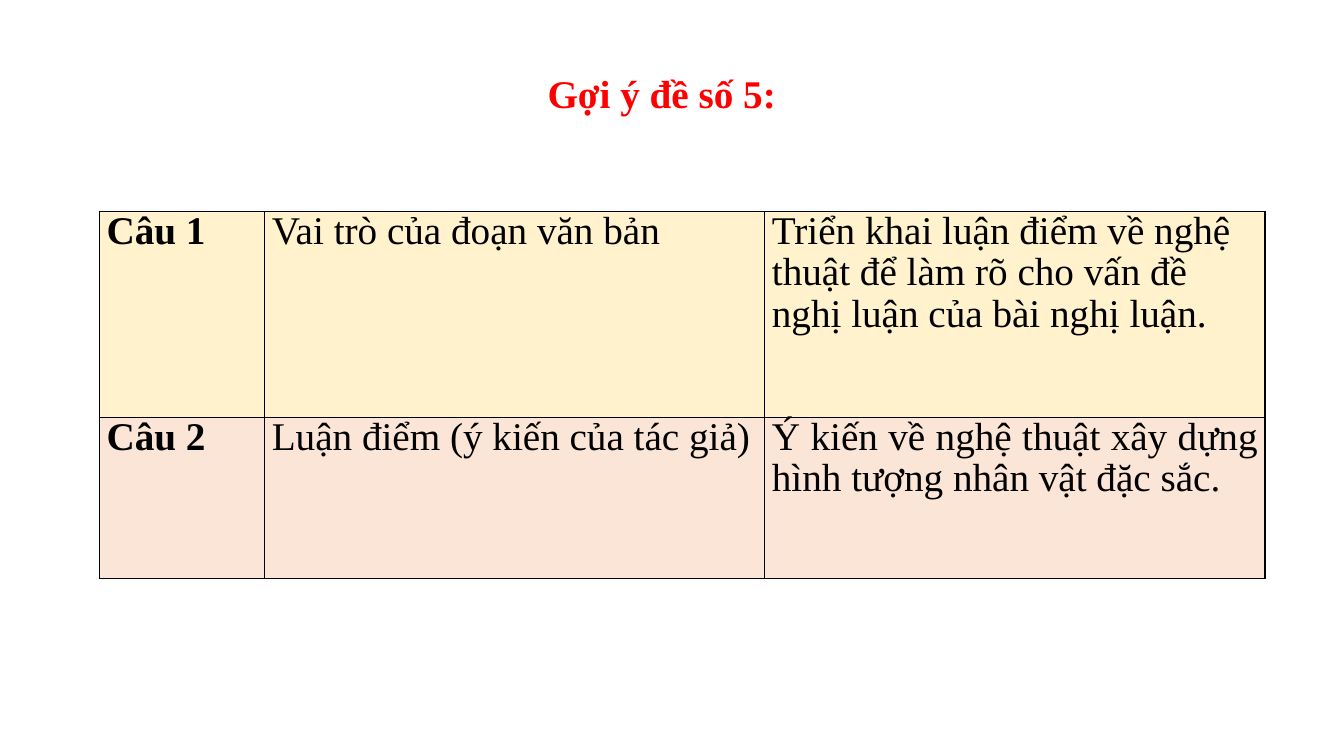
"""Build the answer-hint slide: a red title above a two-row table."""
from dataclasses import dataclass

import lxml.etree
import pptx
import pptx.dml.color
import pptx.enum.text
import pptx.oxml.ns
import pptx.util

SLIDE_WIDTH = pptx.util.Inches(13.33)
SLIDE_HEIGHT = pptx.util.Inches(7.5)
FONT_NAME = "Times New Roman"
FONT_SIZE = pptx.util.Pt(28)
BLACK = "000000"
RED = "FF0000"
LINE_SPACING = 0.95
COLUMN_WIDTHS = [pptx.util.Inches(width) for width in (1.64, 4.96, 4.96)]
LEFT = pptx.enum.text.PP_ALIGN.LEFT
JUSTIFY = pptx.enum.text.PP_ALIGN.JUSTIFY


@dataclass(frozen=True)
class Question:
    label: str
    topic: str
    answer: str
    fill: str
    height: float
    answer_alignment: pptx.enum.text.PP_ALIGN = LEFT


QUESTIONS = [
    Question(
        "Câu 1",
        "Vai trò của đoạn văn bản",
        "Triển khai luận điểm về nghệ thuật để làm rõ cho vấn đề nghị luận của bài nghị luận.",
        "FFF2CC",
        2.04,
    ),
    Question(
        "Câu 2",
        "Luận điểm (ý kiến của tác giả)",
        "Ý kiến về nghệ thuật xây dựng hình tượng nhân vật đặc sắc.",
        "FBE5D6",
        1.6,
        JUSTIFY,
    ),
]


def color(value: str) -> pptx.dml.color.RGBColor:
    return pptx.dml.color.RGBColor.from_string(value)


def add_run(paragraph, text: str, font_color: str, bold: bool) -> None:
    run = paragraph.add_run()
    run.text = text
    run.font.name = FONT_NAME
    run.font.size = FONT_SIZE
    run.font.bold = bold
    run.font.color.rgb = color(font_color)


def add_title(slide, text: str) -> None:
    shape = slide.shapes.add_textbox(
        int(SLIDE_WIDTH * 0.4), int(SLIDE_HEIGHT * 0.085),
        pptx.util.Inches(2.49), pptx.util.Inches(0.57),
    )
    shape.text_frame.word_wrap = False
    shape.text_frame.auto_size = pptx.enum.text.MSO_AUTO_SIZE.SHAPE_TO_FIT_TEXT
    paragraph = shape.text_frame.paragraphs[0]
    paragraph.space_after = pptx.util.Pt(18)
    add_run(paragraph, text, RED, True)


def add_borders(cell) -> None:
    properties = cell._tc.get_or_add_tcPr()
    qualified_name = pptx.oxml.ns.qn
    for side in ("lnL", "lnR", "lnT", "lnB"):
        line = lxml.etree.SubElement(
            properties, qualified_name(f"a:{side}"), w=str(pptx.util.Pt(1))
        )
        fill = lxml.etree.SubElement(line, qualified_name("a:solidFill"))
        lxml.etree.SubElement(fill, qualified_name("a:srgbClr"), val=BLACK)


def fill_cell(cell, text: str, fill: str, bold: bool, alignment) -> None:
    add_borders(cell)
    cell.fill.solid()
    cell.fill.fore_color.rgb = color(fill)
    cell.margin_left = cell.margin_right = pptx.util.Inches(0.07)
    cell.margin_top = cell.margin_bottom = 0
    paragraph = cell.text_frame.paragraphs[0]
    paragraph.alignment = alignment
    paragraph.line_spacing = LINE_SPACING
    add_run(paragraph, text, BLACK, bold)


def add_question_table(slide, questions: list[Question]) -> None:
    heights = [pptx.util.Inches(question.height) for question in questions]
    table = slide.shapes.add_table(
        len(questions), len(COLUMN_WIDTHS),
        int(SLIDE_WIDTH * 0.074), int(SLIDE_HEIGHT * 0.28),
        sum(COLUMN_WIDTHS), sum(heights),
    ).table
    table.first_row = False
    table.horz_banding = False
    for column, width in zip(table.columns, COLUMN_WIDTHS):
        column.width = width
    for row, question, height in zip(table.rows, questions, heights):
        row.height = height
        label, topic, answer = row.cells
        fill_cell(label, question.label, question.fill, True, LEFT)
        fill_cell(topic, question.topic, question.fill, False, LEFT)
        fill_cell(answer, question.answer, question.fill, False, question.answer_alignment)


def main() -> None:
    presentation = pptx.Presentation()
    presentation.slide_width = SLIDE_WIDTH
    presentation.slide_height = SLIDE_HEIGHT
    slide = presentation.slides.add_slide(presentation.slide_layouts[6])
    add_title(slide, "Gợi ý đề số 5:")
    add_question_table(slide, QUESTIONS)
    presentation.save("out.pptx")


if __name__ == "__main__":
    main()
